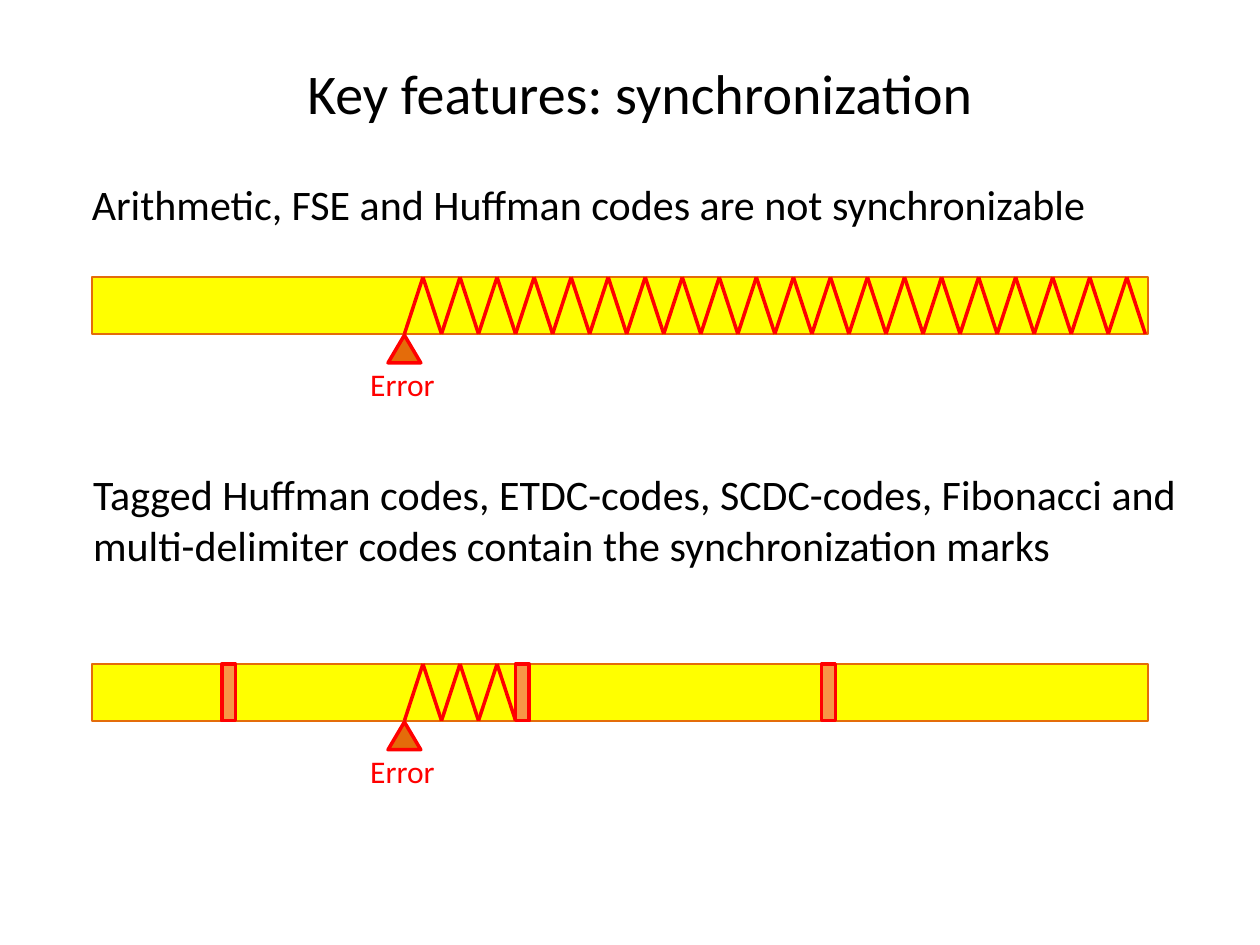
from dataclasses import dataclass

from lxml.etree import SubElement
from pptx import Presentation
from pptx.dml.color import RGBColor
from pptx.enum.shapes import MSO_CONNECTOR as Connector, MSO_SHAPE as Preset
from pptx.enum.text import MSO_ANCHOR as Anchor, MSO_AUTO_SIZE as AutoSize, PP_ALIGN as Align
from pptx.oxml import parse_xml
from pptx.oxml.ns import nsdecls, qn
from pptx.util import Inches, Pt


@dataclass(frozen=True)
class Theme:
    font: str = "Calibri"
    title_size: int = 32
    body_size: int = 24
    label_size: int = 18
    text: str = "000000"
    error: str = "FF0000"
    code: str = "FFFF00"
    accent: str = "E46C0A"
    mark: str = "F79646"


THEME = Theme()
BAR_WIDTH, BAR_HEIGHT = 8.38, 0.45
ERROR_OFFSET = 2.48
HALF_WAVE = 0.147
MARK_WIDTH = 0.11


def write_text(shape, text, size=THEME.body_size, color=THEME.text, align=Align.LEFT):
    shape.text_frame.word_wrap = True
    paragraph = shape.text_frame.paragraphs[0]
    paragraph.alignment = align
    run = paragraph.add_run()
    run.text = text
    run.font.size = Pt(size)
    run.font.color.rgb = RGBColor.from_string(color)
    run.font.name = THEME.font
    return run


def add_text(shapes, box, text, **text_format):
    shape = shapes.add_textbox(*map(Inches, box))
    write_text(shape, text, **text_format)
    shape.text_frame.auto_size = AutoSize.SHAPE_TO_FIT_TEXT


def add_filled(shapes, preset, box, fill, line, weight):
    shape = shapes.add_shape(preset, *map(Inches, box))
    shape.shadow.inherit = False
    shape.fill.solid()
    shape.fill.fore_color.rgb = RGBColor.from_string(fill)
    shape.line.color.rgb = RGBColor.from_string(line)
    shape.line.width = Pt(weight)


def add_title(slide, box, text):
    title = slide.shapes.title
    title.left, title.top, title.width, title.height = map(Inches, box)
    title.text_frame.vertical_anchor = Anchor.MIDDLE
    run = write_text(title, text, size=THEME.title_size, align=Align.CENTER)
    shadow = parse_xml(
        f'<a:effectLst {nsdecls("a")}><a:outerShdw blurRad="38100" dist="38100" '
        'dir="2700000" algn="tl"><a:srgbClr val="000000"><a:alpha val="43000"/>'
        '</a:srgbClr></a:outerShdw></a:effectLst>'
    )
    run.font.fill._xPr.find(qn("a:solidFill")).addnext(shadow)


def add_zigzag(slide, left, top, height, peaks):
    group = slide.shapes.add_group_shape()
    for peak in range(peaks):
        tip = left + (2 * peak + 1) * HALF_WAVE
        for foot in (tip - HALF_WAVE, tip + HALF_WAVE):
            ends = (foot, top + height, tip, top)
            line = group.shapes.add_connector(Connector.STRAIGHT, *map(Inches, ends))
            line.line.color.rgb = RGBColor.from_string(THEME.error)
            line.line.width = Pt(2)
            SubElement(line._element.spPr, qn("a:effectLst"))


def add_error(slide, center, top):
    shapes = slide.shapes.add_group_shape().shapes
    add_filled(shapes, Preset.ISOSCELES_TRIANGLE, (center - 0.13, top, 0.26, 0.22),
               THEME.accent, THEME.error, 2)
    add_text(shapes, (center - 0.37, top + 0.19, 1.46, 0.4), "Error",
             size=THEME.label_size, color=THEME.error)


def add_code_bar(slide, box, peaks, marks=()):
    left, top, width, height = box
    error = left + ERROR_OFFSET
    add_filled(slide.shapes, Preset.RECTANGLE, box, THEME.code, THEME.accent, 1)
    add_zigzag(slide, error, top, height, peaks)
    add_error(slide, error, top + height + 0.01)
    for offset in marks:
        add_filled(slide.shapes, Preset.RECTANGLE, (left + offset, top, MARK_WIDTH, height),
                   THEME.mark, THEME.error, 2)


def main():
    presentation = Presentation()
    presentation.slide_width, presentation.slide_height = Inches(10), Inches(7.5)
    slide = presentation.slides.add_slide(presentation.slide_layouts[5])
    add_title(slide, (0.39, 0.3, 9.38, 0.87), "Key features: synchronization")
    add_text(slide.shapes, (0.63, 1.37, 8.92, 0.5),
             "Arithmetic, FSE and Huffman codes are not synchronizable")
    add_code_bar(slide, (0.73, 2.2, BAR_WIDTH, BAR_HEIGHT), peaks=20)
    add_text(slide.shapes, (0.64, 3.67, 8.92, 0.91),
             "Tagged Huffman codes, ETDC-codes, SCDC-codes, Fibonacci and "
             "multi-delimiter codes contain the synchronization marks")
    add_code_bar(slide, (0.73, 5.27, BAR_WIDTH, BAR_HEIGHT), peaks=3,
                 marks=(1.03, 3.36, 5.79))
    presentation.save("out.pptx")


if __name__ == "__main__":
    main()
